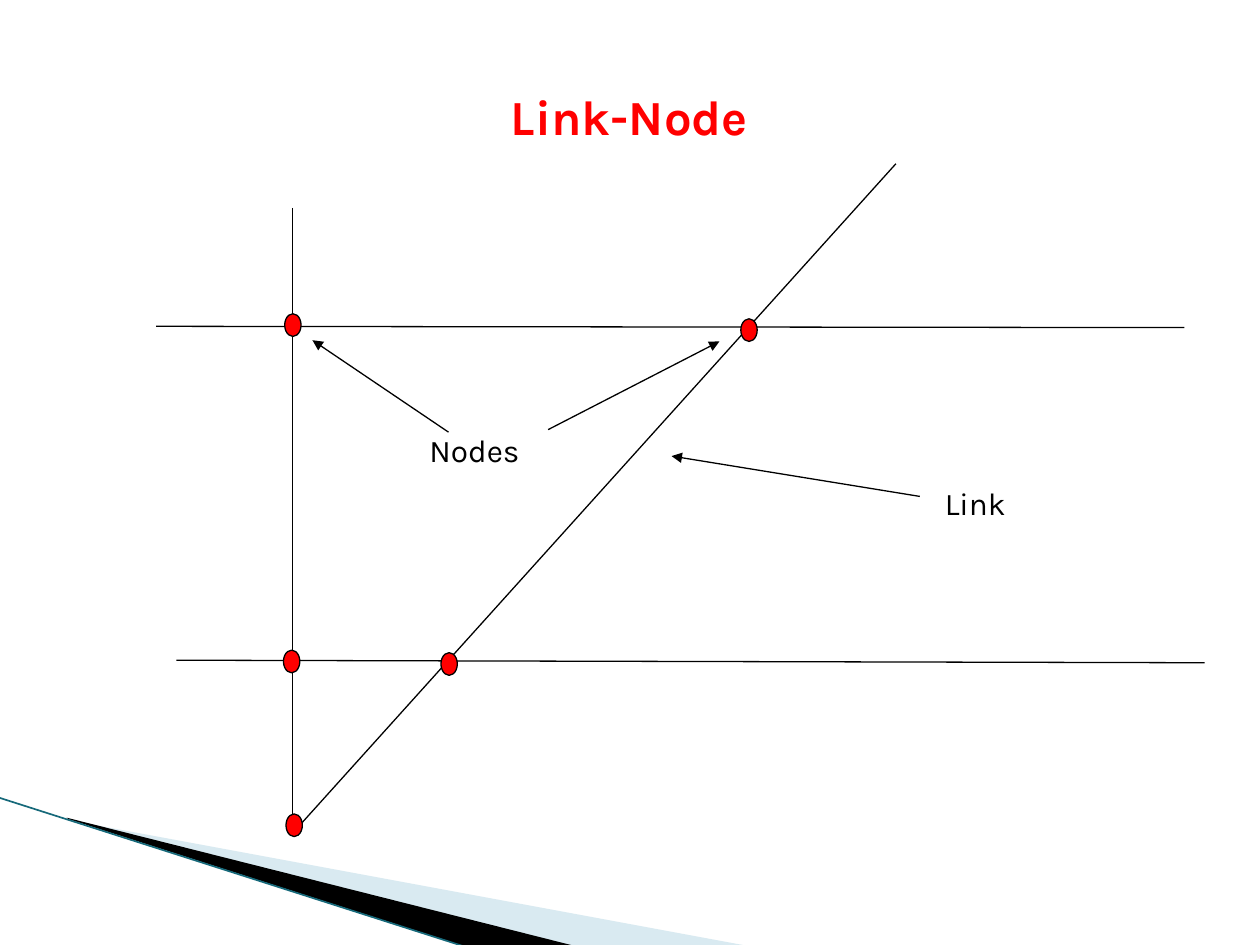
"""Build the Link-Node slide on a grid of 100 columns by 75 rows."""
from lxml.etree import SubElement
from pptx import Presentation
from pptx.dml.color import RGBColor
from pptx.enum.shapes import MSO_CONNECTOR as Connector, MSO_SHAPE as Shape
from pptx.enum.text import MSO_AUTO_SIZE as AutoSize, PP_ALIGN as Align
from pptx.oxml.ns import qn
from pptx.util import Inches, Pt

COLUMNS, ROWS = 100, 75
WIDTH, HEIGHT = Inches(10), Inches(7.5)
FONT = "Karla"
RED = RGBColor(0xFF, 0x00, 0x00)
BLACK = RGBColor(0x00, 0x00, 0x00)
PALE_BLUE = RGBColor(0xA0, 0xCB, 0xDC)
TEAL = RGBColor(0x16, 0x69, 0x7A)
NODE_SIZE = (1.3, 1.8)

ROADS = [
    ((12.4, 25.9), (94, 26)),
    ((14, 52.4), (95.6, 52.6)),
    ((23.2, 16.5), (23.2, 65.4)),
    ((23.7, 65.6), (71.1, 13)),
]
NODES = [(22.7, 64.6), (22.5, 51.6), (35, 51.8), (22.6, 24.9), (58.8, 25.3)]
ARROWS = [
    ((73, 39.4), (53.3, 36.2)),
    ((43.5, 34.1), (57.1, 27.1)),
    ((35.6, 34.3), (24.8, 27)),
]


def grid(column, row):
    """Turn a grid place or size into slide lengths."""
    return round(WIDTH * column / COLUMNS), round(HEIGHT * row / ROWS)


def add_line(page, start, end, color=BLACK, width=0.75, arrow=False):
    """Draw a straight line, with an arrowhead at its end if asked."""
    line = page.shapes.add_connector(Connector.STRAIGHT, *grid(*start), *grid(*end))
    line.line.color.rgb = color
    line.line.width = Pt(width)
    if arrow:
        SubElement(line.line._get_or_add_ln(), qn("a:tailEnd"), type="triangle")
    SubElement(line._element.spPr, qn("a:effectLst"))


def add_node(page, place):
    """Draw a red node with its top left corner at the place."""
    node = page.shapes.add_shape(Shape.OVAL, *grid(*place), *grid(*NODE_SIZE))
    node.shadow.inherit = False
    node.fill.solid()
    node.fill.fore_color.rgb = RED
    node.line.color.rgb = BLACK
    node.line.width = Pt(0.75)


def add_wedge(page, corners, color, opacity=100):
    """Draw a filled outline through the corners."""
    first, *others = [grid(*corner) for corner in corners]
    builder = page.shapes.build_freeform(*first, scale=1.0)
    builder.add_line_segments(others, close=True)
    wedge = builder.convert_to_shape()
    wedge.shadow.inherit = False
    wedge.fill.solid()
    wedge.fill.fore_color.rgb = color
    wedge.line.fill.background()
    if opacity < 100:
        tint = wedge._element.spPr.find(qn("a:solidFill"))[0]
        SubElement(tint, qn("a:alpha"), val=str(opacity * 1000))


def add_label(page, text, place, size, points, color=BLACK, bold=False, align=Align.LEFT):
    """Write one line of text in a box."""
    box = page.shapes.add_textbox(*grid(*place), *grid(*size))
    frame = box.text_frame
    frame.word_wrap = True
    frame.auto_size = AutoSize.SHAPE_TO_FIT_TEXT
    para = frame.paragraphs[0]
    para.text = text
    para.alignment = align
    para.font.name = FONT
    para.font.size = Pt(points)
    para.font.bold = bold
    para.font.color.rgb = color


def main():
    """Build and save the slide."""
    deck = Presentation()
    deck.slide_width, deck.slide_height = WIDTH, HEIGHT
    page = deck.slides.add_slide(deck.slide_layouts[6])

    add_wedge(page, [(5.5, 65.1), (59.5, 75.1), (45.6, 75.1), (5.5, 65)], PALE_BLUE, 40)
    add_wedge(page, [(5.3, 64.9), (45.7, 75.1), (37.2, 75.2), (5.4, 65)], BLACK)
    add_line(page, (-0.1, 63.3), (37.1, 75.2), TEAL, 0.95)

    add_label(page, "Link-Node", (22.1, 6.4), (55.7, 5.7), 28, RED, True, Align.CENTER)
    for start, end in ROADS:
        add_line(page, start, end)
    for place in NODES:
        add_node(page, place)
    for text, place in (("Link", (74, 37.9)), ("Nodes", (33.1, 33.7))):
        add_label(page, text, place, (13.2, 4), 18)
    for start, end in ARROWS:
        add_line(page, start, end, arrow=True)

    deck.save("out.pptx")


if __name__ == "__main__":
    main()
